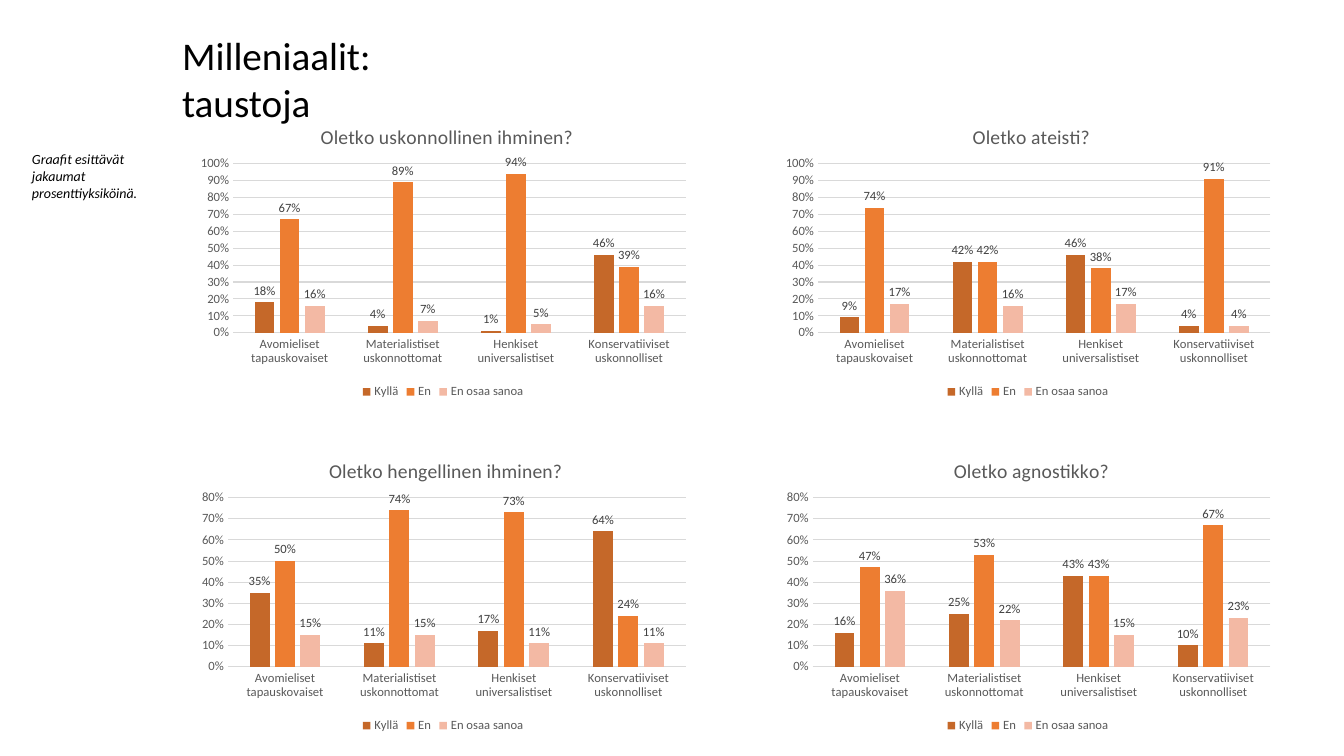
from lxml import etree
from pptx import Presentation
from pptx.chart.data import CategoryChartData
from pptx.dml.color import RGBColor
from pptx.enum.chart import XL_CHART_TYPE as ChartType
from pptx.enum.chart import XL_LABEL_POSITION as LabelPosition
from pptx.enum.chart import XL_LEGEND_POSITION as LegendPosition
from pptx.enum.chart import XL_TICK_MARK as TickMark
from pptx.oxml.ns import qn
from pptx.util import Pt

PX = 9525
FONT = "Calibri"
COLORS = {
    "text": "000000",
    "axis": "595959",
    "label": "404040",
    "grid": "D9D9D9",
    "Kyllä": "C56829",
    "En": "ED7D31",
    "En osaa sanoa": "F3B9A4",
}
ANSWERS = ["Kyllä", "En", "En osaa sanoa"]
GROUPS = [
    "Avomieliset tapauskovaiset",
    "Materialistiset uskonnottomat",
    "Henkiset universalistiset",
    "Konservatiiviset uskonnolliset",
]
CHART_WIDTH, CHART_HEIGHT = 480, 285
CHART_LEFT, CHART_TOP = 182, 99
COLUMN_STEP, ROW_STEP = 557, 318
PLOT_RIGHT = 471
ROW_STYLES = [{"maximum": 1.0, "plot_left": 40}, {"maximum": 0.8, "plot_left": 35}]
QUESTIONS = [
    (0, 1, "Oletko hengellinen ihminen?", 128,
     [[0.35, 0.11, 0.17, 0.64], [0.5, 0.74, 0.73, 0.24], [0.15, 0.15, 0.11, 0.11]]),
    (1, 0, "Oletko ateisti?", 184,
     [[0.09, 0.42, 0.46, 0.04], [0.74, 0.42, 0.38, 0.91], [0.17, 0.16, 0.17, 0.04]]),
    (1, 1, "Oletko agnostikko?", 166,
     [[0.16, 0.25, 0.43, 0.1], [0.47, 0.53, 0.43, 0.67], [0.36, 0.22, 0.15, 0.23]]),
    (0, 0, "Oletko uskonnollinen ihminen?", 120,
     [[0.18, 0.04, 0.01, 0.46], [0.67, 0.89, 0.94, 0.39], [0.16, 0.07, 0.05, 0.16]]),
]


class SlideBuilder:
    def __init__(self, slide):
        self.slide = slide

    def color(self, name):
        return RGBColor.from_string(COLORS[name])

    def style_font(self, font, size, color):
        font.name = FONT
        font.size = Pt(size)
        font.bold = False
        font.color.rgb = self.color(color)

    def style_line(self, line):
        line.color.rgb = self.color("grid")
        line.width = Pt(0.75)

    def place(self, parent, index, **lengths):
        for old_layout in parent.findall(qn("c:layout")):
            parent.remove(old_layout)
        layout = etree.Element(qn("c:layout"))
        manual = etree.SubElement(layout, qn("c:manualLayout"))
        settings = {"xMode": "edge", "yMode": "edge"}
        if "w" in lengths:
            settings = {"layoutTarget": "inner", **settings}
        for key, length in lengths.items():
            total = CHART_WIDTH if key in "xw" else CHART_HEIGHT
            settings[key] = str(round(length / total, 4))
        for key, value in settings.items():
            etree.SubElement(manual, qn(f"c:{key}")).set("val", value)
        parent.insert(index, layout)

    def text(self, words, left, top, width, height, size, italic=False):
        box = self.slide.shapes.add_textbox(left * PX, top * PX, width * PX, height * PX)
        box.text_frame.word_wrap = True
        paragraph = box.text_frame.paragraphs[0]
        paragraph.text = words
        self.style_font(paragraph.font, size, "text")
        paragraph.font.italic = italic

    def chart(self, column, row, question, title_left, answers):
        data = CategoryChartData(number_format="0%")
        data.categories = GROUPS
        for name, values in zip(ANSWERS, answers):
            data.add_series(name, values)
        frame = self.slide.shapes.add_chart(
            ChartType.COLUMN_CLUSTERED,
            (CHART_LEFT + column * COLUMN_STEP) * PX,
            (CHART_TOP + row * ROW_STEP) * PX,
            CHART_WIDTH * PX, CHART_HEIGHT * PX, data)
        chart = frame.chart
        self.style_font(chart.font, 10, "text")
        self.title(chart, question, title_left)
        self.legend(chart)
        self.axes(chart, ROW_STYLES[row]["maximum"])
        self.columns(chart)
        plot_left = ROW_STYLES[row]["plot_left"]
        plot_area = chart.plots[0]._element.getparent()
        self.place(plot_area, 0, x=plot_left, y=57, w=PLOT_RIGHT - plot_left, h=161)

    def title(self, chart, question, left):
        chart.has_title = True
        title = chart.chart_title
        title.include_in_layout = False
        paragraph = title.text_frame.paragraphs[0]
        paragraph.text = question
        self.style_font(paragraph.font, 14, "axis")
        self.place(title._element, 1, x=left, y=15)

    def legend(self, chart):
        chart.has_legend = True
        chart.legend.position = LegendPosition.BOTTOM
        chart.legend.include_in_layout = False
        self.style_font(chart.legend.font, 9, "axis")

    def axes(self, chart, maximum):
        for axis in (chart.category_axis, chart.value_axis):
            axis.major_tick_mark = TickMark.NONE
            axis.minor_tick_mark = TickMark.NONE
            self.style_font(axis.tick_labels.font, 9, "axis")
        self.style_line(chart.category_axis.format.line)
        value_axis = chart.value_axis
        value_axis.minimum_scale = 0
        value_axis.maximum_scale = maximum
        value_axis.major_unit = 0.1
        value_axis.format.line.fill.background()
        value_axis.has_major_gridlines = True
        self.style_line(value_axis.major_gridlines.format.line)
        value_axis.tick_labels.number_format = "0%"
        value_axis.tick_labels.number_format_is_linked = False

    def columns(self, chart):
        plot = chart.plots[0]
        plot.gap_width = 219
        plot.overlap = -27
        plot.vary_by_categories = False
        for series in plot.series:
            series.format.fill.solid()
            series.format.fill.fore_color.rgb = self.color(series.name)
            labels = series.data_labels
            labels.show_value = True
            labels.position = LabelPosition.OUTSIDE_END
            labels.number_format = "0%"
            labels.number_format_is_linked = False
            self.style_font(labels.font, 9, "label")


def main():
    presentation = Presentation()
    presentation.slide_width = 1280 * PX
    presentation.slide_height = 720 * PX
    builder = SlideBuilder(presentation.slides.add_slide(presentation.slide_layouts[6]))
    for question in QUESTIONS:
        builder.chart(*question)
    builder.text("Milleniaalit: taustoja", 164, 25, 316, 55, 28)
    builder.text("Graafit esittävät jakaumat prosenttiyksiköinä.", 21, 139, 128, 59, 10, italic=True)
    presentation.save("out.pptx")


if __name__ == "__main__":
    main()
